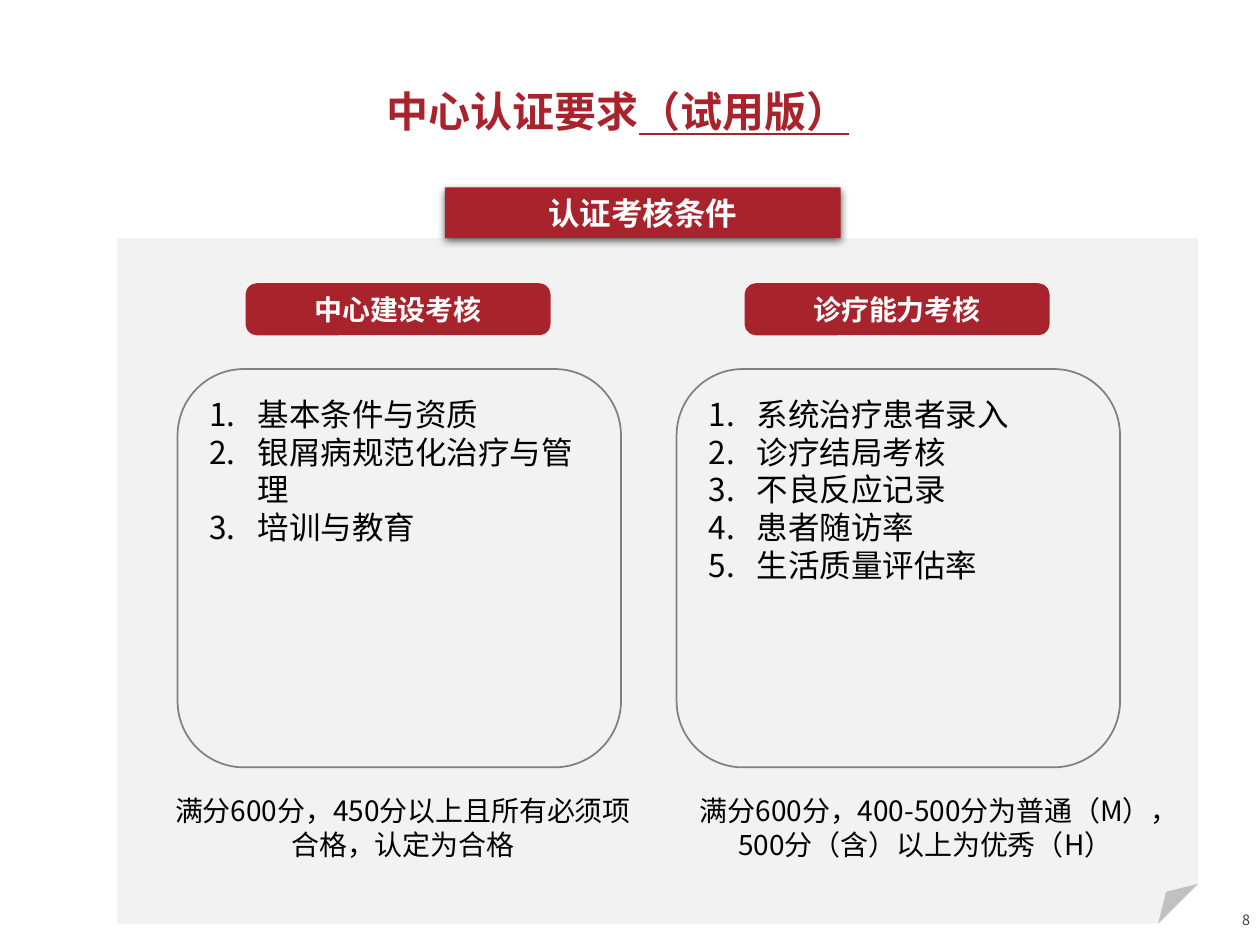
import pptx
import pptx.util
import pptx.dml.color
import pptx.enum.shapes
import pptx.enum.text
import pptx.oxml
import pptx.oxml.ns

Cm = pptx.util.Cm
Pt = pptx.util.Pt
SHAPE = pptx.enum.shapes.MSO_SHAPE
ALIGN = pptx.enum.text.PP_ALIGN
ANCHOR = pptx.enum.text.MSO_ANCHOR
NO_FIT = pptx.enum.text.MSO_AUTO_SIZE.NONE

RED = "A9232D"
COLUMN_STEP = 10.06
COLUMNS = [
    {
        "heading": "中心建设考核",
        "items": ["基本条件与资质", "银屑病规范化治疗与管理", "培训与教育"],
        "note": "满分600分，450分以上且所有必须项合格，认定为合格",
        "note_box": (3.02, 15.88, 10.21, 1.63),
    },
    {
        "heading": "诊疗能力考核",
        "items": ["系统治疗患者录入", "诊疗结局考核", "不良反应记录", "患者随访率", "生活质量评估率"],
        "note": "满分600分，400-500分为普通（M），500分（含）以上为优秀（H）",
        "note_box": (13.64, 15.88, 10.03, 1.63),
    },
]


def rgb(value):
    return pptx.dml.color.RGBColor.from_string(value)


def set_all(target, values):
    for name, value in values.items():
        setattr(target, name, value)


class Deck:
    font = "Noto Sans CJK SC"

    def __init__(self, layout):
        self.prs = pptx.Presentation()
        set_all(self.prs, {"slide_width": Cm(25.4), "slide_height": Cm(19.05)})
        self.s = self.prs.slides.add_slide(self.prs.slide_layouts[layout])

    def place(self, sp, box):
        set_all(sp, dict(zip(("left", "top", "width", "height"), map(Cm, box))))

    def run(self, p, text, color, **style):
        r = p.add_run()
        r.text = text
        set_all(r.font, {"name": self.font, **style})
        r.font.color.rgb = rgb(color)
        ea = pptx.oxml.parse_xml(f'<a:ea {pptx.oxml.ns.nsdecls("a")} typeface="{self.font}"/>')
        r.font._element.find(pptx.oxml.ns.qn("a:latin")).addnext(ea)

    def title(self, parts, box):
        sp = self.s.shapes.title
        self.place(sp, box)
        tf = sp.text_frame
        margins = dict.fromkeys(("margin_left", "margin_top", "margin_right", "margin_bottom"), Cm(0.1))
        set_all(tf, {"auto_size": NO_FIT, "vertical_anchor": ANCHOR.TOP, "word_wrap": True, **margins})
        p = tf.paragraphs[0]
        p.alignment = ALIGN.CENTER
        for text, underline in parts:
            self.run(p, text, RED, size=Pt(24), bold=True, underline=underline)

    def shape(self, kind, box, fill=None, line=None, width=1):
        sp = self.s.shapes.add_shape(kind, *map(Cm, box))
        sp.shadow.inherit = False
        if fill:
            sp.fill.solid()
            sp.fill.fore_color.rgb = rgb(fill)
        else:
            sp.fill.background()
        if line:
            sp.line.color.rgb = rgb(line)
            sp.line.width = Pt(width)
        else:
            sp.line.fill.background()
        return sp

    def folded_panel(self, box, fill, fold):
        sp = self.shape(SHAPE.FOLDED_CORNER, box, fill)
        geometry = sp._element.spPr.find(pptx.oxml.ns.qn("a:prstGeom"))
        geometry.set("prst", "foldedCorner")
        guides = geometry.get_or_add_avLst()
        guides.append(pptx.oxml.parse_xml(
            f'<a:gd {pptx.oxml.ns.nsdecls("a")} name="adj" fmla="val {fold}"/>'))

    def label(self, kind, text, box, size, **look):
        sp = self.shape(kind, box, RED, **look)
        tf = sp.text_frame
        set_all(tf, {"word_wrap": True, "vertical_anchor": ANCHOR.MIDDLE})
        p = tf.paragraphs[0]
        p.alignment = ALIGN.CENTER
        self.run(p, text, "FFFFFF", size=Pt(size), bold=True)
        return sp

    def shadow(self, sp):
        effects = sp._element.spPr.find(pptx.oxml.ns.qn("a:effectLst"))
        effects.append(pptx.oxml.parse_xml(
            f'<a:outerShdw {pptx.oxml.ns.nsdecls("a")} blurRad="{Pt(4.5)}" dist="{Pt(1.5)}" '
            'dir="5400000" rotWithShape="0"><a:srgbClr val="000000">'
            '<a:alpha val="63000"/></a:srgbClr></a:outerShdw>'))

    def numbered(self, index, items, box):
        sp = self.s.placeholders[index]
        self.s.shapes._spTree.append(sp._element)
        self.place(sp, box)
        tf = sp.text_frame
        set_all(tf, {"auto_size": NO_FIT, "vertical_anchor": ANCHOR.TOP, "word_wrap": True})
        for i, item in enumerate(items):
            p = tf.add_paragraph() if i else tf.paragraphs[0]
            pPr = p._p.get_or_add_pPr()
            pPr.set("marL", str(Cm(0.97)))
            pPr.set("indent", str(-Cm(0.97)))
            pPr.append(pptx.oxml.parse_xml(
                f'<a:buAutoNum {pptx.oxml.ns.nsdecls("a")} type="arabicPeriod"/>'))
            p.space_before = Pt(0)
            self.run(p, item, "000000", size=Pt(18))

    def text(self, text, box, size, color="000000", **frame):
        tf = self.s.shapes.add_textbox(*map(Cm, box)).text_frame
        set_all(tf, {"word_wrap": True, **frame})
        p = tf.paragraphs[0]
        p.alignment = ALIGN.CENTER
        self.run(p, text, color, size=Pt(size))


def main():
    deck = Deck(3)
    deck.folded_panel((2.36, 4.8, 21.79, 13.82), "F2F2F2", 5800)
    deck.title([("中心认证要求", False), ("（试用版）", True)], (0.25, 1.63, 24.41, 1.4))
    banner = deck.label(SHAPE.RECTANGLE, "认证考核条件", (8.97, 3.78, 7.98, 1.02), 18)
    deck.shadow(banner)
    for i, column in enumerate(COLUMNS):
        shift = i * COLUMN_STEP
        deck.label(SHAPE.ROUNDED_RECTANGLE, column["heading"],
                   (5.03 + shift, 5.79, 5.99, 0.89), 16, line=RED, width=4.5)
        deck.shape(SHAPE.ROUNDED_RECTANGLE, (3.58 + shift, 7.44, 8.94, 8.03), line="808080")
        deck.numbered(i + 1, column["items"], (3.97 + shift, 7.83, 8.16, 7.25))
        deck.text(column["note"], column["note_box"], 16)
    deck.text("8", (24.84, 18.24, 0.56, 0.81), 8.2, "404040", margin_left=0, margin_right=0)
    deck.prs.save("out.pptx")


if __name__ == "__main__":
    main()
